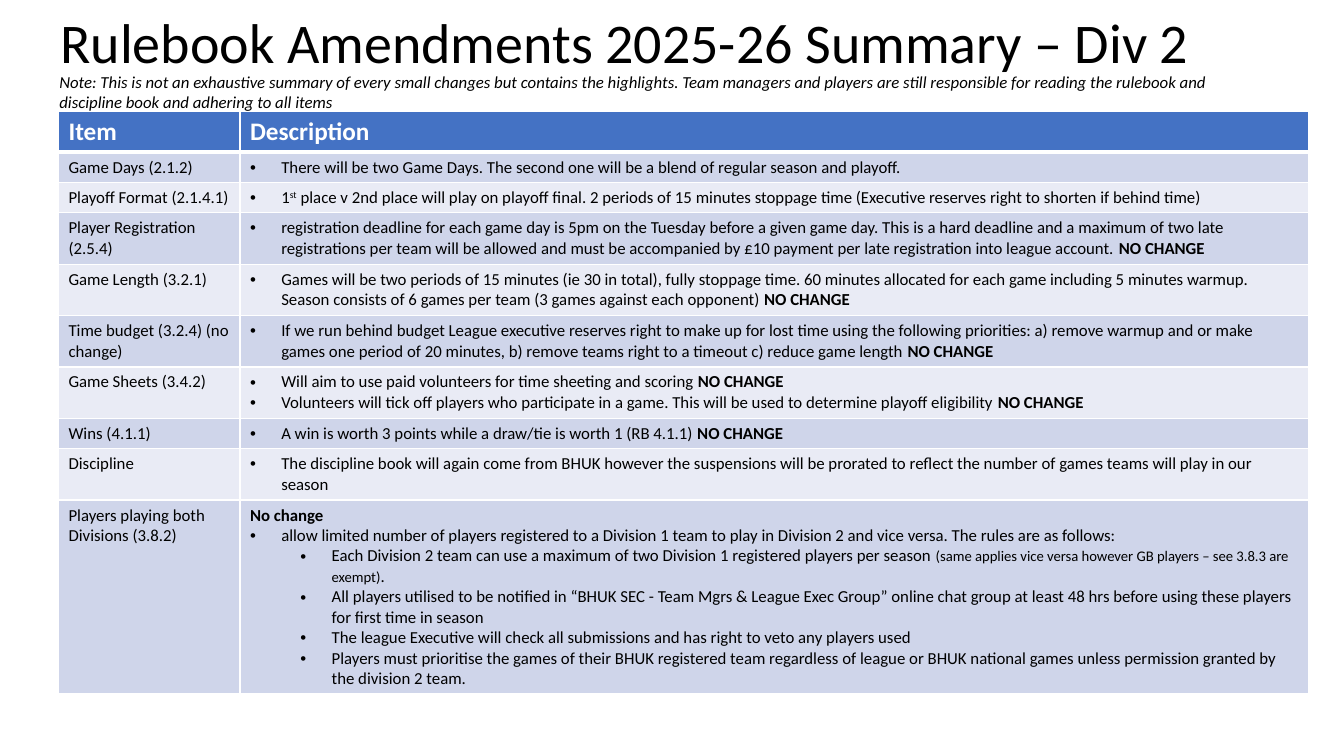
from lxml import etree
from pptx import Presentation
from pptx import util as u
from pptx.dml.color import RGBColor
from pptx.enum import text
from pptx.oxml import ns

FONT = "Calibri"
BLACK = RGBColor(0x00, 0x00, 0x00)
WHITE = RGBColor(0xFF, 0xFF, 0xFF)
HEADER_BLUE = RGBColor(0x44, 0x72, 0xC4)
BANDS = (RGBColor(0xCF, 0xD5, 0xEA), RGBColor(0xE9, 0xEB, 0xF5))

COLUMN_WIDTHS = (1.8, 10.6)
HEADER_HEIGHT = 0.4
BULLET_HANG = 0.31
LEVEL_STEP = 0.5

BOLD = {"bold": True}
SMALL = {"size": 10.5}
SUPER = {"raised": True}
NO_CHANGE = ("NO CHANGE", BOLD)

AMENDMENTS = [
    ("Game Days (2.1.2)", 0.3, [
        (0, ["There will be two Game Days. The second one will be a blend of regular season and playoff."])]),
    ("Playoff Format (2.1.4.1)", 0.3, [
        (0, ["1", ("st", SUPER), " place v 2nd place will play on playoff final. 2 periods of 15 minutes "
             "stoppage time (Executive reserves right to shorten if behind time)"])]),
    ("Player Registration (2.5.4)", 0.51, [
        (0, ["registration deadline for each game day is 5pm on the Tuesday before a given game day. "
             "This is a hard deadline and a maximum of two late registrations per team will be allowed "
             "and must be accompanied by £10 payment per late registration into league account. ",
             NO_CHANGE])]),
    ("Game Length (3.2.1)", 0.51, [
        (0, ["Games will be two periods of 15 minutes (ie 30 in total), fully stoppage time. 60 minutes "
             "allocated for each game including 5 minutes warmup. Season consists of 6 games per team "
             "(3 games against each opponent) ", NO_CHANGE])]),
    ("Time budget (3.2.4) (no change)", 0.51, [
        (0, ["If we run behind budget League executive reserves right to make up for lost time using the "
             "following priorities: a) remove warmup and or make games one period of 20 minutes, "
             "b) remove teams right to a timeout c) reduce game length ", NO_CHANGE])]),
    ("Game Sheets (3.4.2)", 0.51, [
        (0, ["Will aim to use paid volunteers for time sheeting and scoring ", NO_CHANGE]),
        (0, ["Volunteers will tick off players who participate in a game. This will be used to determine "
             "playoff eligibility ", NO_CHANGE])]),
    ("Wins (4.1.1)", 0.3, [
        (0, ["A win is worth 3 points while a draw/tie is worth 1 (RB 4.1.1) ", NO_CHANGE])]),
    ("Discipline", 0.51, [
        (0, ["The discipline book will again come from BHUK however the suspensions will be prorated to "
             "reflect the number of games teams will play in our season"])]),
    ("Players playing both Divisions (3.8.2)", 1.92, [
        (None, [("No change", BOLD)]),
        (0, ["allow limited number of players registered to a Division 1 team to play in Division 2 and "
             "vice versa. The rules are as follows:"]),
        (1, ["Each Division 2 team can use a maximum of two Division 1 registered players per season ",
             ("(same applies vice versa however GB players – see 3.8.3 are exempt)", SMALL), "."]),
        (1, ["All players utilised to be notified in “BHUK SEC - Team Mgrs & League Exec Group” online "
             "chat group at least 48 hrs before using these players for first time in season"]),
        (1, ["The league Executive will check all submissions and has right to veto any players used"]),
        (1, ["Players must prioritise the games of their BHUK registered team regardless of league or "
             "BHUK national games unless permission granted by the division 2 team."])]),
]


def add_span(para, words, size=12, color=BLACK, bold=False, italic=False, raised=False):
    span = para.add_run()
    span.text = words
    font = span.font
    font.name, font.size, font.bold, font.italic = FONT, u.Pt(size), bold, italic
    font.color.rgb = color
    if raised:
        font._element.set("baseline", "30000")


def add_bullet(para, level):
    para.level = level
    props = para._p.get_or_add_pPr()
    props.set("marL", str(u.Inches(BULLET_HANG + level * LEVEL_STEP)))
    props.set("indent", str(-u.Inches(BULLET_HANG)))
    etree.SubElement(props, ns.qn("a:buFont")).set("typeface", "Arial")
    etree.SubElement(props, ns.qn("a:buChar")).set("char", "•")


def fill_cell(cell, color, bottom=1):
    props = cell._tc.get_or_add_tcPr()
    for side, points in (("L", 1), ("R", 1), ("T", 1), ("B", bottom)):
        line = etree.SubElement(props, ns.qn(f"a:ln{side}"), w=str(u.Pt(points)))
        paint = etree.SubElement(line, ns.qn("a:solidFill"))
        etree.SubElement(paint, ns.qn("a:srgbClr"), val=str(WHITE))
    cell.fill.solid()
    cell.fill.fore_color.rgb = color


def add_text(page, left, top, width, height, words, anchor=text.MSO_ANCHOR.TOP, spacing=1.0, **style):
    box = page.shapes.add_textbox(*map(u.Inches, (left, top, width, height)))
    frame = box.text_frame
    frame.word_wrap = True
    frame.vertical_anchor = anchor
    para = frame.paragraphs[0]
    para.line_spacing = spacing
    add_span(para, words, **style)


def add_description(cell, items):
    frame = cell.text_frame
    for index, (level, spans) in enumerate(items):
        para = frame.add_paragraph() if index else frame.paragraphs[0]
        if level is not None:
            add_bullet(para, level)
        for span in spans:
            words, style = (span, {}) if isinstance(span, str) else span
            add_span(para, words, **style)


def add_amendments(page, left, top):
    heights = [HEADER_HEIGHT] + [height for _, height, _ in AMENDMENTS]
    size = (sum(COLUMN_WIDTHS), sum(heights))
    frame = page.shapes.add_table(len(heights), len(COLUMN_WIDTHS), *map(u.Inches, (left, top, *size)))
    table = frame.table
    for column, width in zip(table.columns, COLUMN_WIDTHS):
        column.width = u.Inches(width)
    for row, height in zip(table.rows, heights):
        row.height = u.Inches(height)
    for column, heading in enumerate(("Item", "Description")):
        cell = table.cell(0, column)
        fill_cell(cell, HEADER_BLUE, bottom=3)
        add_span(cell.text_frame.paragraphs[0], heading, size=18, color=WHITE, bold=True)
    for index, (item, _, description) in enumerate(AMENDMENTS):
        item_cell, description_cell = table.rows[index + 1].cells
        for cell in (item_cell, description_cell):
            fill_cell(cell, BANDS[index % 2])
        add_span(item_cell.text_frame.paragraphs[0], item)
        add_description(description_cell, description)


def main():
    deck = Presentation()
    deck.slide_width, deck.slide_height = u.Inches(13.33), u.Inches(7.5)
    page = deck.slides.add_slide(deck.slide_layouts[6])
    add_text(page, 0.5, 0.12, 12.21, 0.68, "Rulebook Amendments 2025-26 Summary – Div 2",
             anchor=text.MSO_ANCHOR.BOTTOM, spacing=0.9, size=40)
    add_amendments(page, 0.58, 1.11)
    add_text(page, 0.49, 0.66, 11.8, 0.5,
             "Note: This is not an exhaustive summary of every small changes but contains the highlights. "
             "Team managers and players are still responsible for reading the rulebook and discipline book "
             "and adhering to all items", italic=True)
    deck.save("out.pptx")


if __name__ == "__main__":
    main()
